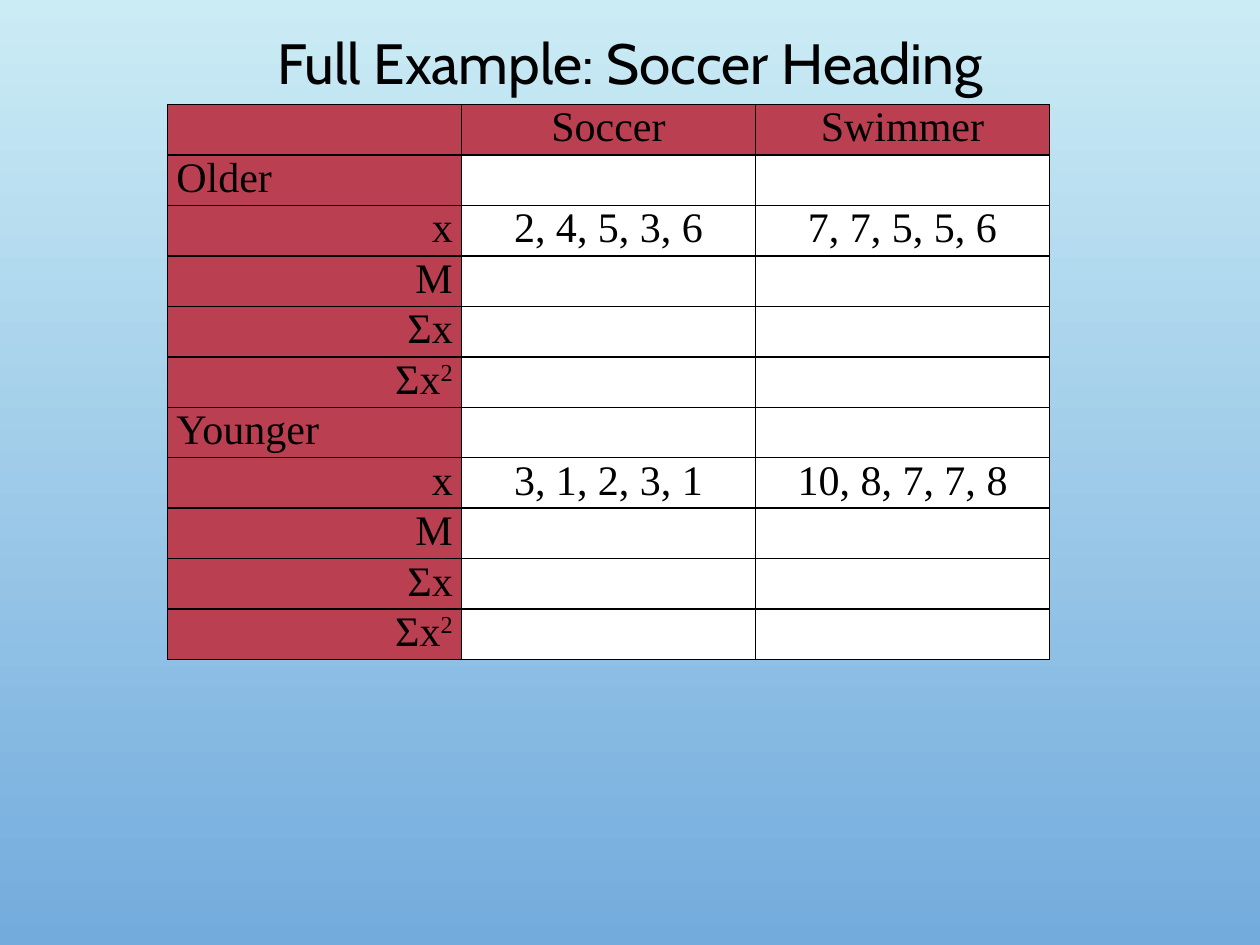
from dataclasses import dataclass

from lxml.etree import SubElement
from pptx import Presentation
from pptx.dml.color import RGBColor
from pptx.enum.text import MSO_ANCHOR, PP_ALIGN
from pptx.oxml.ns import qn
from pptx.slide import Slide
from pptx.table import _Cell
from pptx.util import Inches, Pt

SKY_TOP = RGBColor(0xCB, 0xEC, 0xF5)
SKY_BOTTOM = RGBColor(0x73, 0xAB, 0xDD)
CRIMSON = RGBColor(0xBA, 0x3F, 0x51)
WHITE = RGBColor(0xFF, 0xFF, 0xFF)
BLACK = RGBColor(0x00, 0x00, 0x00)

SLIDE_WIDTH = Inches(10)
SLIDE_HEIGHT = Inches(7.5)
TABLE_LEFT = Inches(1.33)
TABLE_TOP = Inches(0.83)
TABLE_WIDTH = Inches(7)
TABLE_HEIGHT = Inches(4.3)
CELL_MARGIN = Inches(0.07)
BORDER_SIDES = ("a:lnL", "a:lnR", "a:lnT", "a:lnB")


@dataclass(frozen=True)
class AgeGroup:
    label: str
    soccer_scores: str
    swimmer_scores: str


@dataclass(frozen=True)
class Row:
    label: str
    soccer: str = ""
    swimmer: str = ""
    label_align: PP_ALIGN = PP_ALIGN.RIGHT
    exponent: str = ""


AGE_GROUPS = (
    AgeGroup("Older", "2, 4, 5, 3, 6", "7, 7, 5, 5, 6"),
    AgeGroup("Younger", "3, 1, 2, 3, 1", "10, 8, 7, 7, 8"),
)


def group_rows(group: AgeGroup) -> list[Row]:
    return [
        Row(group.label, label_align=PP_ALIGN.LEFT),
        Row("x", group.soccer_scores, group.swimmer_scores),
        Row("M"),
        Row("Σx"),
        Row("Σx", exponent="2"),
    ]


def paint_background(slide: Slide) -> None:
    fill = slide.background.fill
    fill.gradient()
    fill.gradient_angle = 270
    for stop, color in zip(fill.gradient_stops, (SKY_TOP, SKY_BOTTOM)):
        stop.color.rgb = color


def add_title(slide: Slide, wording: str) -> None:
    title = slide.shapes.add_textbox(
        int(SLIDE_WIDTH * 0.05), int(SLIDE_HEIGHT * 0.04),
        int(SLIDE_WIDTH * 0.9), int(SLIDE_HEIGHT * 0.06),
    )
    frame = title.text_frame
    frame.word_wrap = True
    frame.vertical_anchor = MSO_ANCHOR.MIDDLE
    frame.margin_top = frame.margin_bottom = 0
    frame.text = wording
    heading = frame.paragraphs[0]
    heading.alignment = PP_ALIGN.CENTER
    heading.line_spacing = 0.9
    font = heading.runs[0].font
    font.name = "Cabin"
    font.size = Pt(32.4)
    font.color.rgb = BLACK


def draw_borders(cell: _Cell) -> None:
    properties = cell._tc.get_or_add_tcPr()
    for position, side in enumerate(BORDER_SIDES):
        border = properties.makeelement(qn(side), {"w": str(Pt(1))})
        solid = SubElement(border, qn("a:solidFill"))
        SubElement(solid, qn("a:srgbClr"), val=str(BLACK))
        properties.insert(position, border)


def fill_cell(cell: _Cell, wording: str, align: PP_ALIGN,
              color: RGBColor, exponent: str = "") -> None:
    cell.fill.solid()
    cell.fill.fore_color.rgb = color
    cell.margin_left = cell.margin_right = CELL_MARGIN
    cell.margin_top = cell.margin_bottom = 0
    draw_borders(cell)
    if not wording:
        return
    cell.text_frame.text = wording
    entry = cell.text_frame.paragraphs[0]
    entry.alignment = align
    if exponent:
        raised = entry.add_run()
        raised.text = exponent
        raised.font._element.set("baseline", "30000")
    for run in entry.runs:
        run.font.name = "Times New Roman"
        run.font.size = Pt(24)
        run.font.color.rgb = BLACK


def add_scores_table(slide: Slide, rows: list[Row]) -> None:
    table = slide.shapes.add_table(
        len(rows), 3, TABLE_LEFT, TABLE_TOP, TABLE_WIDTH, TABLE_HEIGHT
    ).table
    for row_index, row in enumerate(rows):
        fill_cell(table.cell(row_index, 0), row.label, row.label_align,
                  CRIMSON, row.exponent)
        score_color = CRIMSON if row_index == 0 else WHITE
        for column, scores in enumerate((row.soccer, row.swimmer), start=1):
            fill_cell(table.cell(row_index, column), scores,
                      PP_ALIGN.CENTER, score_color)


def main() -> None:
    presentation = Presentation()
    presentation.slide_width = SLIDE_WIDTH
    presentation.slide_height = SLIDE_HEIGHT
    slide = presentation.slides.add_slide(presentation.slide_layouts[6])
    paint_background(slide)
    add_title(slide, "Full Example: Soccer Heading")
    rows = [Row("", "Soccer", "Swimmer")]
    for group in AGE_GROUPS:
        rows.extend(group_rows(group))
    add_scores_table(slide, rows)
    presentation.save("out.pptx")


if __name__ == "__main__":
    main()
